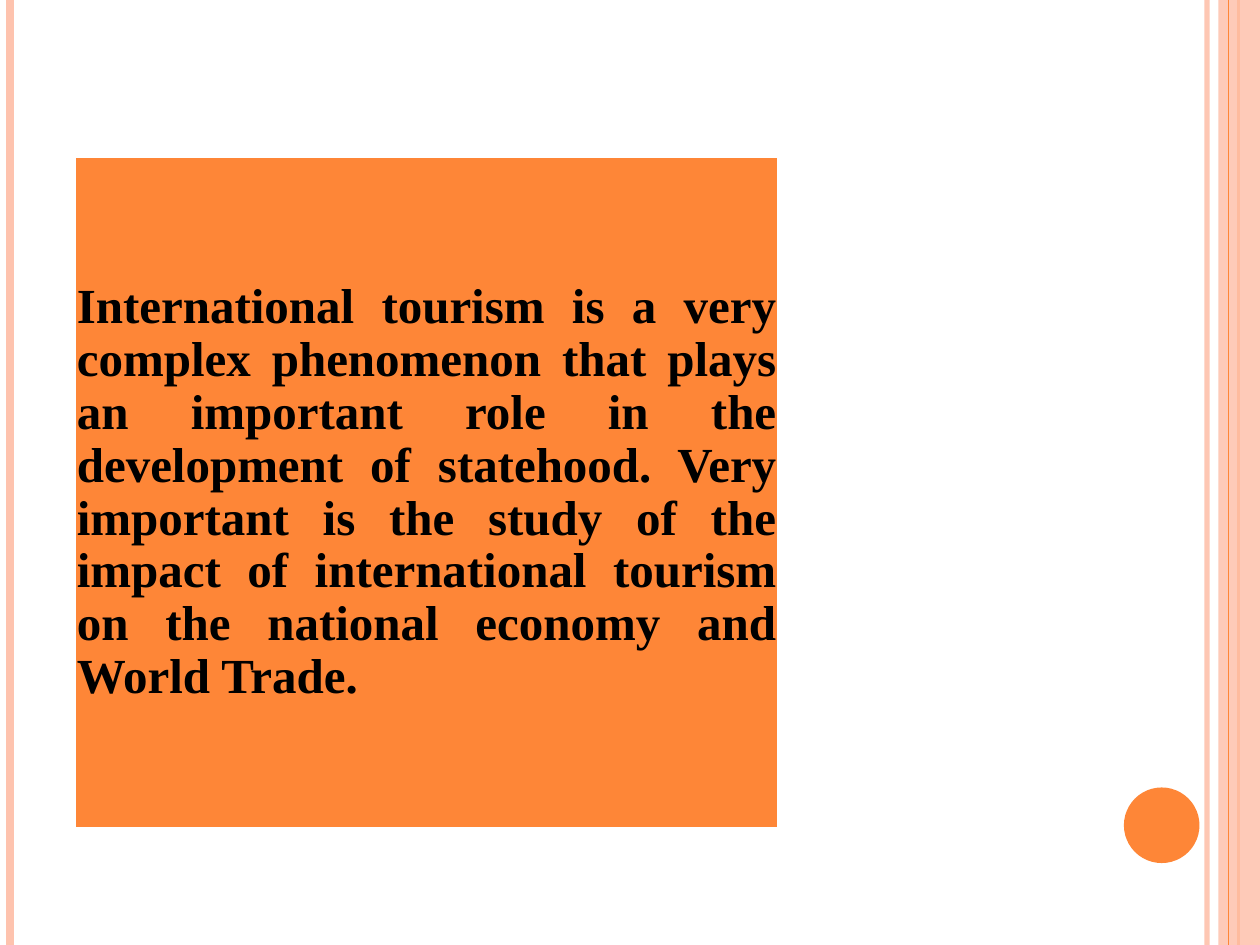
import pptx
import pptx.dml.color
import pptx.enum.shapes
import pptx.enum.text
import pptx.oxml.ns
import pptx.util
import lxml.etree

EMU_PER_PX = 9144  # 100 px to the inch
WIDTH, HEIGHT = 1000, 750

ORANGE = pptx.dml.color.RGBColor(0xFE, 0x86, 0x37)
PEACH = pptx.dml.color.RGBColor(0xFE, 0xC3, 0xAE)
WHITE = pptx.dml.color.RGBColor(0xFF, 0xFF, 0xFF)
BLACK = pptx.dml.color.RGBColor(0x00, 0x00, 0x00)

STATEMENT = (
    "International tourism is a very complex phenomenon that plays an "
    "important role in the development of statehood. Very important is the "
    "study of the impact of international tourism on the national economy "
    "and World Trade."
)


def px(length):
    return pptx.util.Emu(length * EMU_PER_PX)


def apply_format(target, values):
    for name, value in values.items():
        setattr(target, name, value)


def set_opacity(fill_owner, percent):
    """Make the solid colour found below fill_owner partly transparent."""
    colour = next(fill_owner.iter(pptx.oxml.ns.qn("a:srgbClr")))
    alpha = lxml.etree.SubElement(colour, pptx.oxml.ns.qn("a:alpha"))
    alpha.set("val", str(percent * 1000))


class SlideBuilder:
    statement_font = {
        "name": "Times New Roman",
        "size": pptx.util.Pt(28),
        "bold": True,
    }
    statement_frame = {
        "word_wrap": True,
        "vertical_anchor": pptx.enum.text.MSO_ANCHOR.MIDDLE,
        "margin_left": px(2),
        "margin_right": px(2),
        "margin_top": px(2),
        "margin_bottom": px(2),
    }
    statement_paragraph = {
        "alignment": pptx.enum.text.PP_ALIGN.JUSTIFY,
        "line_spacing": 0.9,
    }

    def __init__(self, slide):
        self.slide = slide

    def stripe(self, x, colour, points, opacity=100):
        """Draw a vertical line over the full height of the slide."""
        stripe = self.slide.shapes.add_connector(
            pptx.enum.shapes.MSO_CONNECTOR.STRAIGHT,
            px(x), px(0), px(x), px(HEIGHT),
        )
        stripe.line.color.rgb = colour
        stripe.line.width = pptx.util.Pt(points)
        properties = stripe._element.spPr
        lxml.etree.SubElement(properties, pptx.oxml.ns.qn("a:effectLst"))
        if opacity < 100:
            set_opacity(properties, opacity)

    def block(self, kind, left, top, width, height, colour, opacity=100):
        block = self.slide.shapes.add_shape(
            kind, px(left), px(top), px(width), px(height)
        )
        block.shadow.inherit = False
        block.fill.solid()
        block.fill.fore_color.rgb = colour
        block.line.fill.background()
        if opacity < 100:
            set_opacity(block._element.spPr, opacity)
        return block

    def statement(self, text, left, top, width, height):
        panel = self.block(
            pptx.enum.shapes.MSO_SHAPE.RECTANGLE,
            left, top, width, height, ORANGE,
        )
        panel.line.color.rgb = WHITE
        panel.line.width = pptx.util.Pt(2)
        apply_format(panel.text_frame, self.statement_frame)
        paragraph = panel.text_frame.paragraphs[0]
        apply_format(paragraph, self.statement_paragraph)
        run = paragraph.add_run()
        run.text = text
        apply_format(run.font, self.statement_font)
        run.font.color.rgb = BLACK


def main():
    presentation = pptx.Presentation()
    presentation.slide_width = px(WIDTH)
    presentation.slide_height = px(HEIGHT)
    blank_layout = presentation.slide_layouts[6]
    builder = SlideBuilder(presentation.slides.add_slide(blank_layout))

    builder.stripe(958, PEACH, 3, opacity=93)
    builder.stripe(8, PEACH, 4.5)
    builder.stripe(983, ORANGE, 1.5)
    builder.block(
        pptx.enum.shapes.MSO_SHAPE.RECTANGLE,
        967, 0, 33, HEIGHT, PEACH, opacity=87,
    )
    builder.stripe(975, ORANGE, 0.75)
    builder.block(pptx.enum.shapes.MSO_SHAPE.OVAL, 892, 625, 60, 60, ORANGE)
    builder.statement(STATEMENT, 59, 124, 559, 534)

    presentation.save("out.pptx")


if __name__ == "__main__":
    main()
